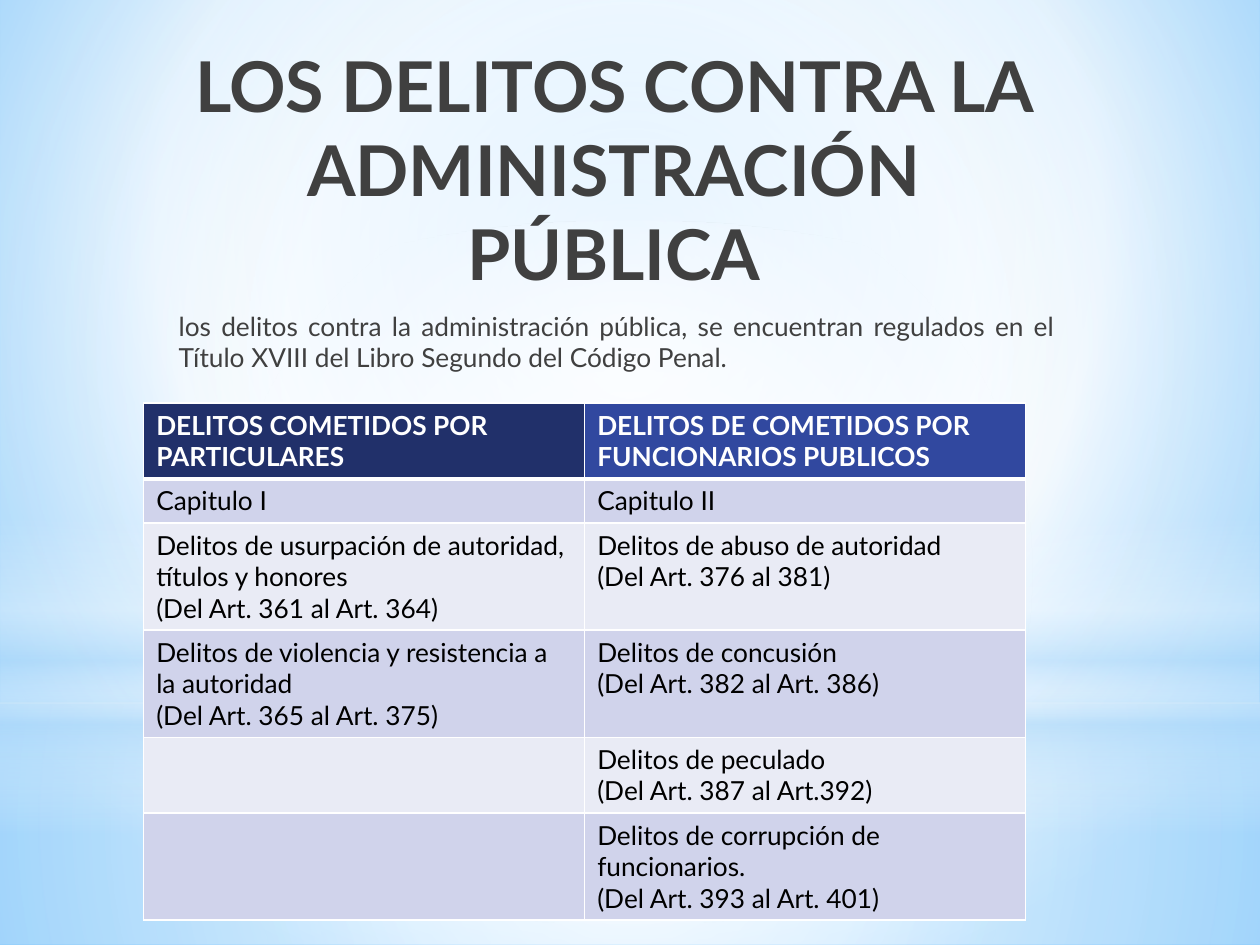
from lxml import etree
from pptx import Presentation
from pptx.dml.color import RGBColor
from pptx.enum.shapes import MSO_SHAPE
from pptx.enum.text import MSO_ANCHOR, PP_ALIGN
from pptx.oxml.ns import qn
from pptx.util import Inches, Pt

RECTANGLE, OVAL = MSO_SHAPE.RECTANGLE, MSO_SHAPE.OVAL
CENTER, JUSTIFY = PP_ALIGN.CENTER, PP_ALIGN.JUSTIFY
TOP = MSO_ANCHOR.TOP

FONT = "Lato"
WHITE = RGBColor(0xFF, 0xFF, 0xFF)
BLACK = RGBColor(0x00, 0x00, 0x00)
CHARCOAL = RGBColor(0x40, 0x40, 0x40)
PALE_BLUE = RGBColor(0xB4, 0xDC, 0xFA)
SKY = RGBColor(0x9E, 0xD5, 0xFF)
BRIGHT_BLUE = RGBColor(0x5B, 0xB9, 0xFF)
HEADER_FILLS = (RGBColor(0x21, 0x30, 0x6A), RGBColor(0x31, 0x48, 0x9F))
BAND_FILLS = (RGBColor(0xD0, 0xD3, 0xEB), RGBColor(0xE9, 0xEB, 0xF5))

CENTRE_FOCUS = (50, 50, 50, 50)

# Background layers: shape, box, focus (None for a vertical blend),
# stops as (position %, colour, opacity %)
LAYERS = (
    (RECTANGLE, (0, 5.58, 10, 1.92), CENTRE_FOCUS,
     ((0, WHITE, 91), (37, WHITE, 76), (100, PALE_BLUE, 79))),
    (RECTANGLE, (0, 0, 10, 5.58), CENTRE_FOCUS,
     ((0, WHITE, 89), (48, WHITE, 62), (100, PALE_BLUE, 79))),
    (RECTANGLE, (0, 4.12, 10, 2.5), None,
     ((0, WHITE, 0), (29, WHITE, 30), (45, PALE_BLUE, 40),
      (55, WHITE, 26), (65, PALE_BLUE, 60), (100, WHITE, 0))),
    (OVAL, (0, 1.75, 10, 5.58), CENTRE_FOCUS,
     ((0, WHITE, 100), (56, WHITE, 0), (100, WHITE, 0))),
)

TITLE = "LOS DELITOS CONTRA LA ADMINISTRACIÓN PÚBLICA"
INTRO = ("los delitos contra la administración pública, se encuentran regulados "
         "en el Título XVIII del Libro Segundo del Código Penal.")
CRIMES = (
    ("DELITOS COMETIDOS POR PARTICULARES",
     "DELITOS DE COMETIDOS POR FUNCIONARIOS PUBLICOS"),
    ("Capitulo I", "Capitulo II"),
    ("Delitos de usurpación de autoridad, títulos y honores\n(Del Art. 361 al Art. 364)",
     "Delitos de abuso de autoridad\n(Del Art. 376 al 381)"),
    ("Delitos de violencia y resistencia a la autoridad\n(Del Art. 365 al Art. 375)",
     "Delitos de concusión\n(Del Art. 382 al Art. 386)"),
    ("", "Delitos de peculado\n(Del Art. 387 al Art.392)"),
    ("", "Delitos de corrupción de funcionarios.\n(Del Art. 393 al Art. 401)"),
)
ROW_HEIGHTS = (0.6, 0.35, 0.85, 0.85, 0.6, 0.85)
COLUMN_WIDTH = 3.5


def inches(box):
    return [Inches(value) for value in box]


def add_colour(parent, colour, opacity=100):
    node = etree.SubElement(parent, qn("a:srgbClr"), val=str(colour))
    if opacity < 100:
        etree.SubElement(node, qn("a:alpha"), val=str(opacity * 1000))


def set_gradient(fill, owner, stops, focus):
    """Fill with a circular gradient around focus, or a vertical one."""
    fill.background()
    gradient = etree.Element(qn("a:gradFill"), rotWithShape="1")
    stop_list = etree.SubElement(gradient, qn("a:gsLst"))
    for position, colour, opacity in stops:
        stop = etree.SubElement(stop_list, qn("a:gs"), pos=str(position * 1000))
        add_colour(stop, colour, opacity)
    if focus:
        circle = etree.SubElement(gradient, qn("a:path"), {"path": "circle"})
        sides = {side: str(value * 1000) for side, value in zip("ltrb", focus)}
        etree.SubElement(circle, qn("a:fillToRect"), sides)
    else:
        etree.SubElement(gradient, qn("a:lin"), ang="5400000", scaled="0")
    empty_fill = owner.find(".//" + qn("a:noFill"))
    empty_fill.getparent().replace(empty_fill, gradient)


def add_layer(slide, kind, box, focus, stops):
    layer = slide.shapes.add_shape(kind, *inches(box))
    layer.shadow.inherit = False
    layer.line.fill.background()
    set_gradient(layer.fill, layer.element, stops, focus)


def format_text(frame, size, colour, bold=False):
    for paragraph in frame.paragraphs:
        for run in paragraph.runs:
            run.font.name = FONT
            run.font.size = Pt(size)
            run.font.bold = bold
            run.font.color.rgb = colour


def add_text(slide, box, text, size, alignment, bold=False):
    frame = slide.shapes.add_textbox(*inches(box)).text_frame
    frame.word_wrap = True
    frame.vertical_anchor = TOP
    frame.text = text
    frame.paragraphs[0].alignment = alignment
    format_text(frame, size, CHARCOAL, bold)
    return frame.paragraphs[0]


def set_borders(cell, bottom_width):
    properties = cell._tc.get_or_add_tcPr()
    widths = {"a:lnL": 1, "a:lnR": 1, "a:lnT": 1, "a:lnB": bottom_width}
    for index, (side, width) in enumerate(widths.items()):
        border = etree.Element(qn(side), w=str(Pt(width)))
        add_colour(etree.SubElement(border, qn("a:solidFill")), WHITE)
        properties.insert(index, border)


def add_crimes_table(slide, left, top):
    columns = len(CRIMES[0])
    table = slide.shapes.add_table(
        len(CRIMES), columns, Inches(left), Inches(top),
        Inches(COLUMN_WIDTH * columns), Inches(sum(ROW_HEIGHTS))).table
    for column in table.columns:
        column.width = Inches(COLUMN_WIDTH)
    for r, (texts, height) in enumerate(zip(CRIMES, ROW_HEIGHTS)):
        table.rows[r].height = Inches(height)
        header = r == 0
        for c, text in enumerate(texts):
            cell = table.cell(r, c)
            cell.fill.solid()
            cell.fill.fore_color.rgb = HEADER_FILLS[c] if header else BAND_FILLS[(r - 1) % 2]
            set_borders(cell, 3 if header else 1)
            cell.text_frame.text = text
            format_text(cell.text_frame, 15, WHITE if header else BLACK, header)


def main():
    presentation = Presentation()
    presentation.slide_width, presentation.slide_height = Inches(10), Inches(7.5)
    slide = presentation.slides.add_slide(presentation.slide_layouts[6])

    # Sky background and its translucent layers
    set_gradient(slide.background.fill, slide.element,
                 ((0, SKY, 100), (60, WHITE, 100), (100, BRIGHT_BLUE, 100)),
                 (20, 10, 20, 60))
    for kind, box, focus, stops in LAYERS:
        add_layer(slide, kind, box, focus, stops)

    # Title and introduction
    add_text(slide, (1.27, 0.29, 7.2, 1.42), TITLE, 40, CENTER, bold=True)
    intro = add_text(slide, (1.27, 2.41, 7.2, 2.36), INTRO, 15, JUSTIFY)
    intro.space_after = Pt(3)
    intro._p.get_or_add_pPr().set("marL", str(Inches(0.05)))

    # Crimes by kind of offender
    add_crimes_table(slide, 1.14, 3.2)

    presentation.save("out.pptx")


if __name__ == "__main__":
    main()
